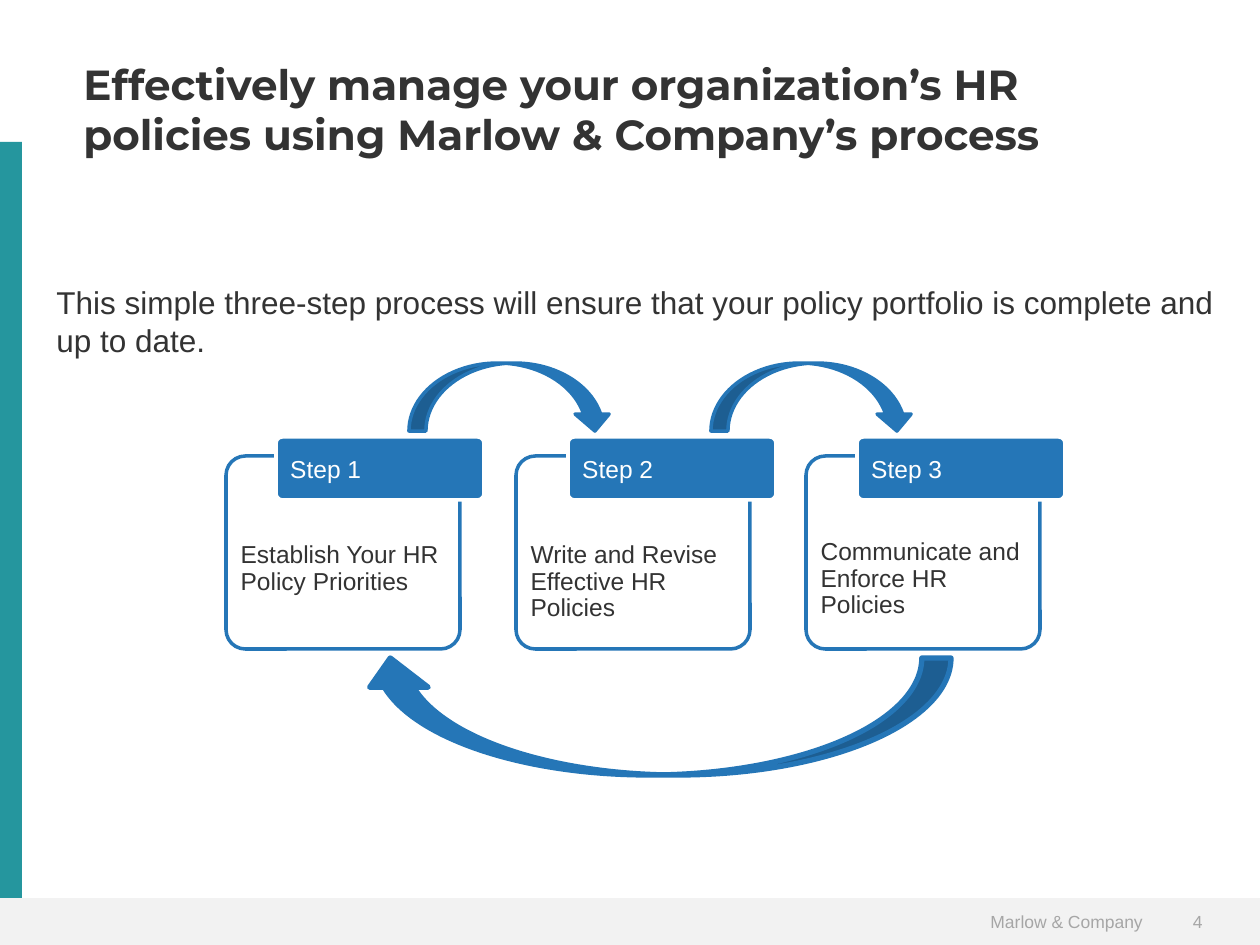
from dataclasses import dataclass

from pptx import Presentation, util as u
from pptx.dml.color import RGBColor
from pptx.enum import shapes, text

KIND = shapes.MSO_SHAPE


@dataclass(frozen=True)
class Theme:
    """Colours, fonts and type sizes."""
    ink: str = "333333"
    blue: str = "2576B7"
    teal: str = "25969E"
    band: str = "F2F2F2"
    muted: str = "A6A6A6"
    white: str = "FFFFFF"
    heading: str = "Montserrat"
    body: str = "Arial"
    title_size: int = 24
    lead_size: int = 18
    step_size: int = 14
    footer_size: int = 10


def px(n):
    """Convert pixels at 126 to the inch into EMU."""
    return u.Emu(round(n * 914400 / 126))


class Deck:
    """Holds the theme and the current slide."""

    def __init__(self, prs, theme):
        """Add a blank slide to draw on."""
        self.t = theme
        self.s = prs.slides.add_slide(prs.slide_layouts[6])

    def add_words(self, shape, words, size, color, font=None, bold=False,
                  align=text.PP_ALIGN.LEFT, anchor=text.MSO_ANCHOR.MIDDLE):
        """Put one styled run into a shape."""
        tf = shape.text_frame
        tf.word_wrap = True
        tf.vertical_anchor = anchor
        p = tf.paragraphs[0]
        p.alignment = align
        r = p.add_run()
        r.text = words
        r.font.size = u.Pt(size)
        r.font.name = font or self.t.body
        r.font.bold = bold
        r.font.color.rgb = RGBColor.from_string(color)
        return p

    def label(self, box, words, size, font=None, bold=False):
        """Add a text box."""
        tb = self.s.shapes.add_textbox(*map(px, box))
        self.add_words(tb, words, size, self.t.ink, font, bold,
                       anchor=text.MSO_ANCHOR.TOP)

    def shape(self, kind, box, fill, line=None, width=2):
        """Add a flat preset shape."""
        sp = self.s.shapes.add_shape(kind, *map(px, box))
        sp.shadow.inherit = False
        sp.fill.solid()
        sp.fill.fore_color.rgb = RGBColor.from_string(fill)
        if line:
            sp.line.color.rgb = RGBColor.from_string(line)
            sp.line.width = u.Pt(width)
        else:
            sp.line.fill.background()
        return sp

    def card(self, left, words, inset):
        """Add the outlined description card of a step."""
        sp = self.shape(KIND.ROUNDED_RECTANGLE, (left, 456, 234, 193),
                        self.t.white, self.t.blue)
        sp.adjustments[0] = 0.1
        tf = sp.text_frame
        tf.margin_left, tf.margin_right = px(9), px(3)
        tf.margin_top, tf.margin_bottom = px(inset), 0
        p = self.add_words(sp, words, self.t.step_size, self.t.ink,
                           anchor=text.MSO_ANCHOR.TOP)
        p.line_spacing = 0.9

    def tab(self, left, words):
        """Add the filled heading tab of a step."""
        sp = self.shape(KIND.ROUNDED_RECTANGLE, (left, 437, 208, 63),
                        self.t.blue, self.t.white)
        sp.adjustments[0] = 0.1
        self.add_words(sp, words, self.t.step_size, self.t.white)

    def arrow(self, box, width=2, rotation=0):
        """Add a curved arrow."""
        sp = self.shape(KIND.CURVED_DOWN_ARROW, box, self.t.blue,
                        self.t.blue, width)
        sp.rotation = rotation

    def footer(self, left, width, words, align, indent=13):
        """Add one part of the footer band."""
        sp = self.shape(KIND.RECTANGLE, (left, 898, width, 47), self.t.band)
        sp.text_frame.margin_left = px(indent)
        self.add_words(sp, words, self.t.footer_size, self.t.muted,
                       align=align)


def main():
    """Build and save the slide."""
    prs = Presentation()
    prs.slide_width, prs.slide_height = px(1260), px(945)
    t = Theme()
    d = Deck(prs, t)
    d.footer(0, 1155, "Marlow & Company", text.PP_ALIGN.RIGHT)
    d.footer(1155, 105, "4", text.PP_ALIGN.LEFT, 38)
    d.shape(KIND.RECTANGLE, (0, 142, 22, 756), t.teal)
    d.label((71, 52, 1120, 118),
            "Effectively manage your organization’s HR policies using "
            "Marlow & Company’s process", t.title_size, t.heading, True)
    d.label((44, 277, 1188, 91),
            "This simple three-step process will ensure that your policy "
            "portfolio is complete and up to date.", t.lead_size)
    steps = [("Establish Your HR Policy Priorities", 81, 276),
             ("Write and Revise Effective HR Policies", 81, 568),
             ("Communicate and Enforce HR Policies", 78, 857)]
    for i, (words, inset, tab_left) in enumerate(steps):
        d.card(226 + 290 * i, words, inset)
        d.tab(tab_left, f"Step {i + 1}")
    for left in (409, 711):
        d.arrow((left, 363, 203, 68))
    d.arrow((361, 658, 590, 117), 3, 180)
    prs.save("out.pptx")


if __name__ == "__main__":
    main()
